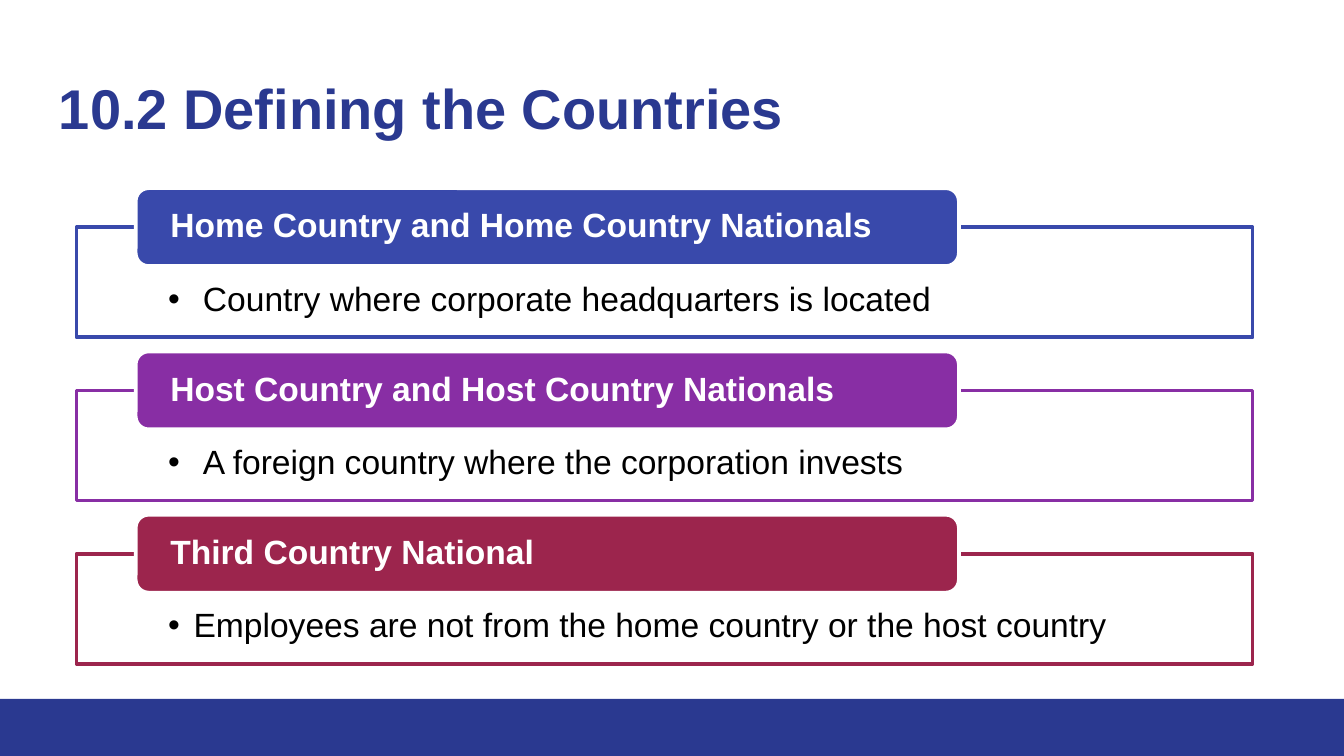
from lxml import etree
from pptx import Presentation
from pptx.dml.color import RGBColor
from pptx.enum.shapes import MSO_SHAPE
from pptx.enum.text import MSO_ANCHOR, PP_ALIGN
from pptx.oxml.ns import qn
from pptx.util import Inches, Pt

RECTANGLE = MSO_SHAPE.RECTANGLE
ROUNDED = MSO_SHAPE.ROUNDED_RECTANGLE
TOP, MIDDLE = MSO_ANCHOR.TOP, MSO_ANCHOR.MIDDLE
LEFT = PP_ALIGN.LEFT

COLORS = {
    "navy": "2A3990",
    "home": "3949AB",
    "host": "882EA4",
    "third": "9C254D",
    "white": "FFFFFF",
    "black": "000000",
}

SECTIONS = [
    ("home", "Home Country and Home Country Nationals",
     "Country where corporate headquarters is located", 0.26),
    ("host", "Host Country and Host Country Nationals",
     "A foreign country where the corporation invests", 0.26),
    ("third", "Third Country National",
     "Employees are not from the home country or the host country", 0.19),
]


def color(name):
    return RGBColor.from_string(COLORS[name])


def add_box(slide, kind, left, top, width, height, fill, line=None, alpha=None):
    shape = slide.shapes.add_shape(
        kind, Inches(left), Inches(top), Inches(width), Inches(height))
    shape.shadow.inherit = False
    shape.fill.solid()
    shape.fill.fore_color.rgb = color(fill)
    if alpha is not None:
        fill_color = shape.fill._xPr.find(qn("a:solidFill"))[0]
        etree.SubElement(fill_color, qn("a:alpha"), val=str(alpha * 1000))
    if line:
        shape.line.color.rgb = color(line)
        shape.line.width = Pt(2)
    else:
        shape.line.fill.background()
    return shape


def write_text(shape, text, size=18, ink="black", bold=False, anchor=TOP,
               insets=(0.1, 0.1, 0.1, 0.1), spacing=1.0, bullet_indent=None):
    frame = shape.text_frame
    frame.word_wrap = True
    frame.vertical_anchor = anchor
    (frame.margin_left, frame.margin_top,
     frame.margin_right, frame.margin_bottom) = map(Inches, insets)
    paragraph = frame.paragraphs[0]
    paragraph.alignment = LEFT
    paragraph.line_spacing = spacing
    run = paragraph.add_run()
    run.text = text
    run.font.name = "Arial"
    run.font.size = Pt(size)
    run.font.bold = bold
    run.font.color.rgb = color(ink)
    if bullet_indent is not None:
        properties = paragraph._p.get_or_add_pPr()
        properties.set("marL", str(Inches(bullet_indent)))
        properties.set("indent", str(-Inches(bullet_indent)))
        etree.SubElement(properties, qn("a:buFont"), typeface="Arial")
        etree.SubElement(properties, qn("a:buChar"), char="•")


def add_title(slide, left, top, width, height):
    title = slide.shapes.add_textbox(
        Inches(left), Inches(top), Inches(width), Inches(height))
    write_text(title, "10.2 Defining the Countries", size=30, ink="navy",
               bold=True)


def add_section(slide, left, top, width, accent, heading, detail, bullet_indent):
    body = add_box(slide, RECTANGLE, left, top + 0.29, width, 0.82,
                   "white", line=accent, alpha=90)
    write_text(body, detail, insets=(0.68, 0.41, 0.68, 0.14),
               spacing=0.9, bullet_indent=bullet_indent)
    header = add_box(slide, ROUNDED, left + 0.44, top, width * 0.7, 0.58,
                     accent, line="white")
    write_text(header, heading, ink="white", bold=True, anchor=MIDDLE,
               insets=(0.23, 0, 0.23, 0), spacing=0.9)


def add_sections(slide, left, first_top, last_top, width):
    pitch = (last_top - first_top) / (len(SECTIONS) - 1)
    for index, section in enumerate(SECTIONS):
        add_section(slide, left, first_top + index * pitch, width, *section)


def main():
    presentation = Presentation()
    presentation.slide_width = Inches(10)
    presentation.slide_height = Inches(10) * 9 // 16
    slide = presentation.slides.add_slide(presentation.slide_layouts[6])
    add_box(slide, RECTANGLE, 0, 5.2, 10, 0.43, "navy")
    add_title(slide, 0.34, 0.45, 9.32, 0.77)
    add_sections(slide, 0.57, 1.4, 3.83, 8.75)
    presentation.save("out.pptx")


if __name__ == "__main__":
    main()
